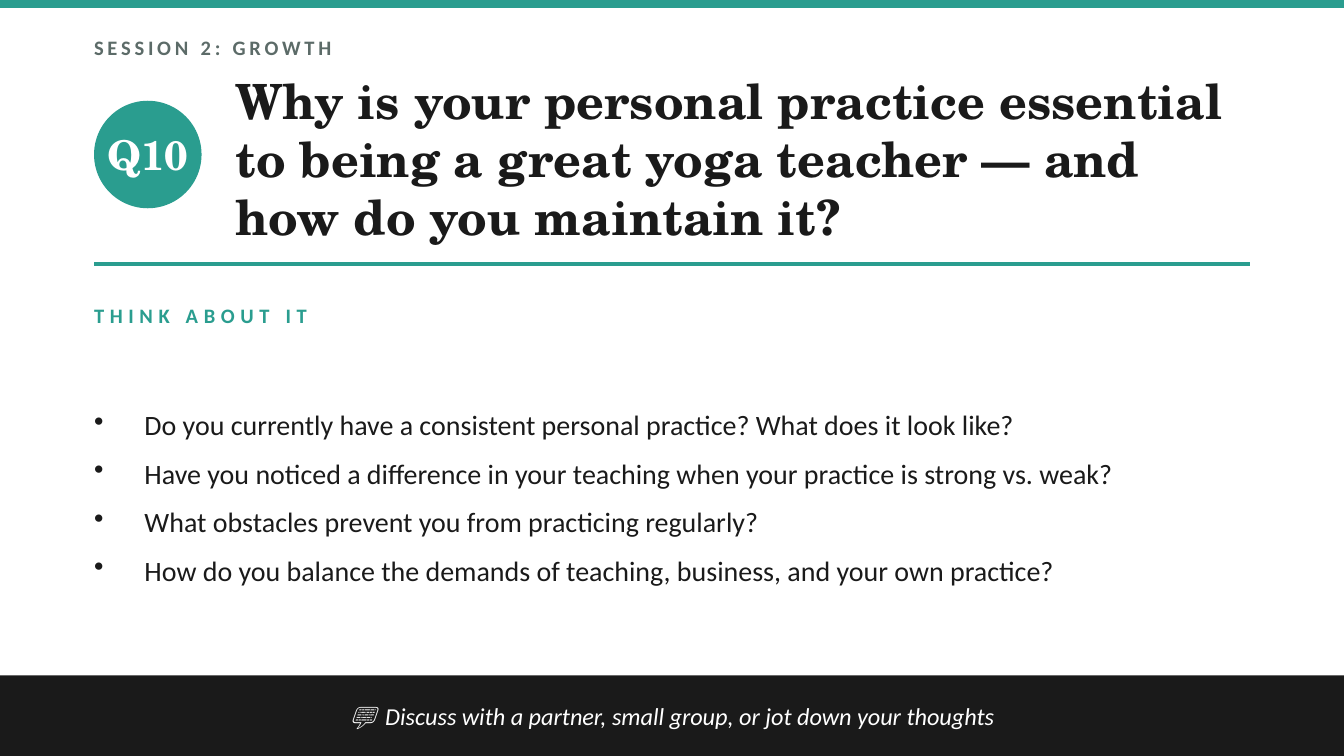
from dataclasses import dataclass, field

from lxml import etree
from pptx import Presentation
from pptx import util as u
from pptx.dml.color import RGBColor
from pptx.enum import shapes, text
from pptx.oxml.ns import qn

HUES = {"teal": "2A9D8F", "ink": "1A1A1A", "gray": "5C6B68", "white": "FFFFFF"}
SANS, SERIF = "Calibri", "TeX Gyre Schola"
SPAN = 10
TALL = SPAN * 9 / 16
LEFT, WIDE = 0.7, 8.6
FOOT = 0.6
INDENT = u.Pt(27)
RECT, OVAL = shapes.MSO_SHAPE.RECTANGLE, shapes.MSO_SHAPE.OVAL
MID = text.PP_ALIGN.CENTER

Box = tuple[float, float, float, float]


@dataclass
class Block:
    box: Box
    hue: str
    kind: shapes.MSO_SHAPE = RECT


@dataclass
class Label:
    box: Box
    lines: list[str]
    hue: str
    font: dict
    para: dict = field(default_factory=dict)
    track: int = 0
    dots: bool = False


def style(size: float, name: str = SANS, **more) -> dict:
    return {"size": u.Pt(size), "name": name, **more}


def apply(item, values: dict) -> None:
    for key, value in values.items():
        setattr(item, key, value)


def place(box: Box) -> list[u.Length]:
    return [u.Inches(n) for n in box]


def draw_block(slide, block: Block) -> None:
    shape = slide.shapes.add_shape(block.kind, *place(block.box))
    shape.shadow.inherit = False
    shape.fill.solid()
    shape.fill.fore_color.rgb = RGBColor.from_string(HUES[block.hue])
    shape.line.fill.background()


def add_dot(para) -> None:
    props = para._p.get_or_add_pPr()
    props.set("marL", str(INDENT))
    props.set("indent", str(-INDENT))
    etree.SubElement(props, qn("a:buSzPct")).set("val", "100000")
    etree.SubElement(props, qn("a:buChar")).set("char", "•")


def end_size(para, size: u.Length) -> None:
    """Size the paragraph mark, which the bullet follows."""
    mark = etree.SubElement(para._p, qn("a:endParaRPr"))
    mark.set("sz", str(int(size.pt * 100)))


def draw_label(slide, label: Label) -> None:
    frame = slide.shapes.add_textbox(*place(label.box)).text_frame
    apply(frame, {
        "word_wrap": True, "vertical_anchor": text.MSO_ANCHOR.MIDDLE,
        "margin_left": 0, "margin_right": 0, "margin_top": 0, "margin_bottom": 0,
    })
    for i, line in enumerate(label.lines):
        para = frame.add_paragraph() if i else frame.paragraphs[0]
        apply(para, label.para)
        if label.dots:
            add_dot(para)
        run = para.add_run()
        run.text = line
        apply(run.font, label.font)
        run.font.color.rgb = RGBColor.from_string(HUES[label.hue])
        if label.track:
            run._r.get_or_add_rPr().set("spc", str(label.track * 100))
        end_size(para, label.font["size"])


ITEMS = [
    Block((0, 0, SPAN, 0.06), "teal"),
    Label((LEFT, 0.2, WIDE, 0.3), ["SESSION 2: GROWTH"], "gray",
          style(11, bold=True), track=2),
    Block((LEFT, 0.75, 0.8, 0.8), "teal", OVAL),
    Label((LEFT, 0.8, 0.8, 0.7), ["Q10"], "white",
          style(22, SERIF, bold=True), {"alignment": MID}),
    Label((1.75, 0.65, 7.55, 1.05),
          ["Why is your personal practice essential to being a great "
           "yoga teacher — and how do you maintain it?"],
          "ink", style(26, SERIF, bold=True)),
    Block((LEFT, 1.95, WIDE, 0.03), "teal"),
    Label((LEFT, 2.2, WIDE, 0.3), ["THINK ABOUT IT"], "teal",
          style(11, bold=True), track=3),
    Label((LEFT, 2.65, WIDE, 2.1), [
        "Do you currently have a consistent personal practice? What does it look like?",
        "Have you noticed a difference in your teaching when your practice is strong vs. weak?",
        "What obstacles prevent you from practicing regularly?",
        "How do you balance the demands of teaching, business, and your own practice?",
    ], "ink", style(15), {"space_after": u.Pt(8)}, dots=True),
    Block((0, TALL - FOOT, SPAN, FOOT), "ink"),
    Label((0.5, TALL - FOOT, 9, FOOT),
          ["💬  Discuss with a partner, small group, or jot down your thoughts"],
          "white", style(13, italic=True), {"alignment": MID}),
]


def main() -> None:
    deck = Presentation()
    apply(deck, {"slide_width": u.Inches(SPAN), "slide_height": u.Inches(TALL)})
    slide = deck.slides.add_slide(deck.slide_layouts[6])
    for item in ITEMS:
        draw = draw_block if isinstance(item, Block) else draw_label
        draw(slide, item)
    deck.save("out.pptx")


if __name__ == "__main__":
    main()
